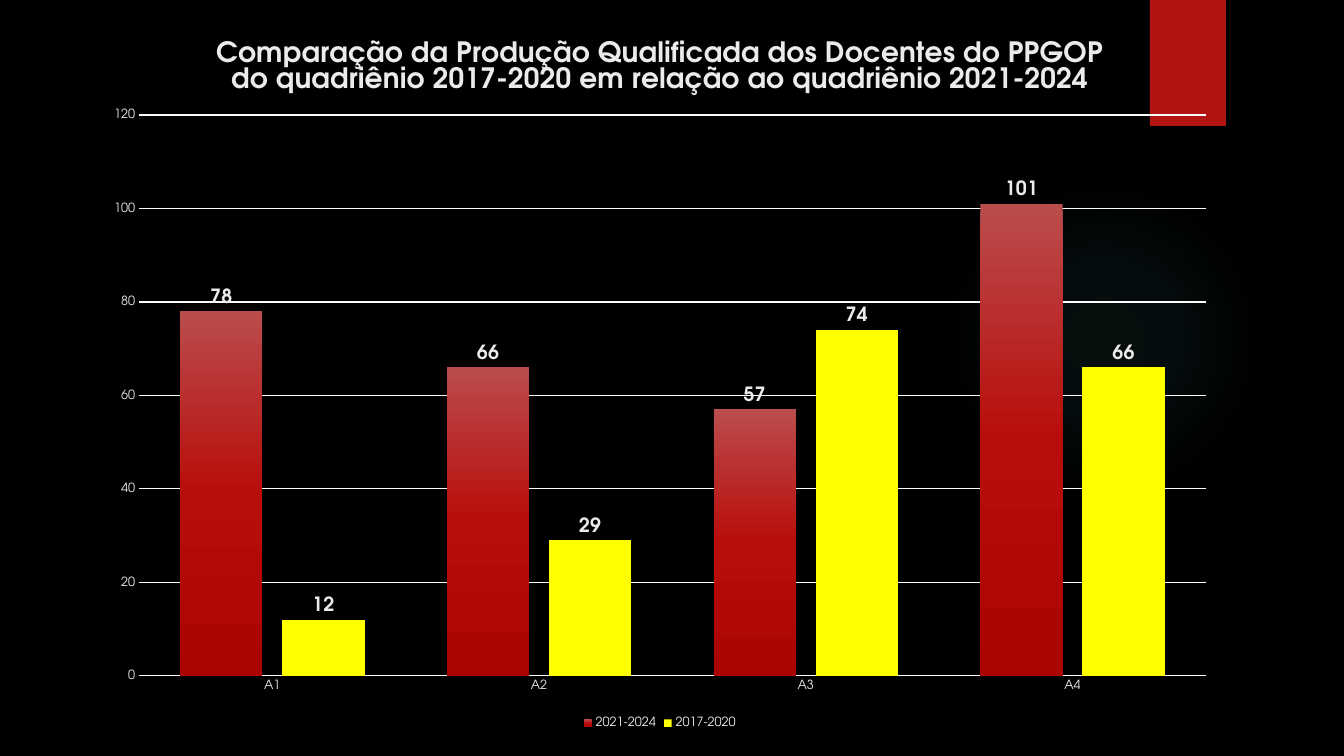
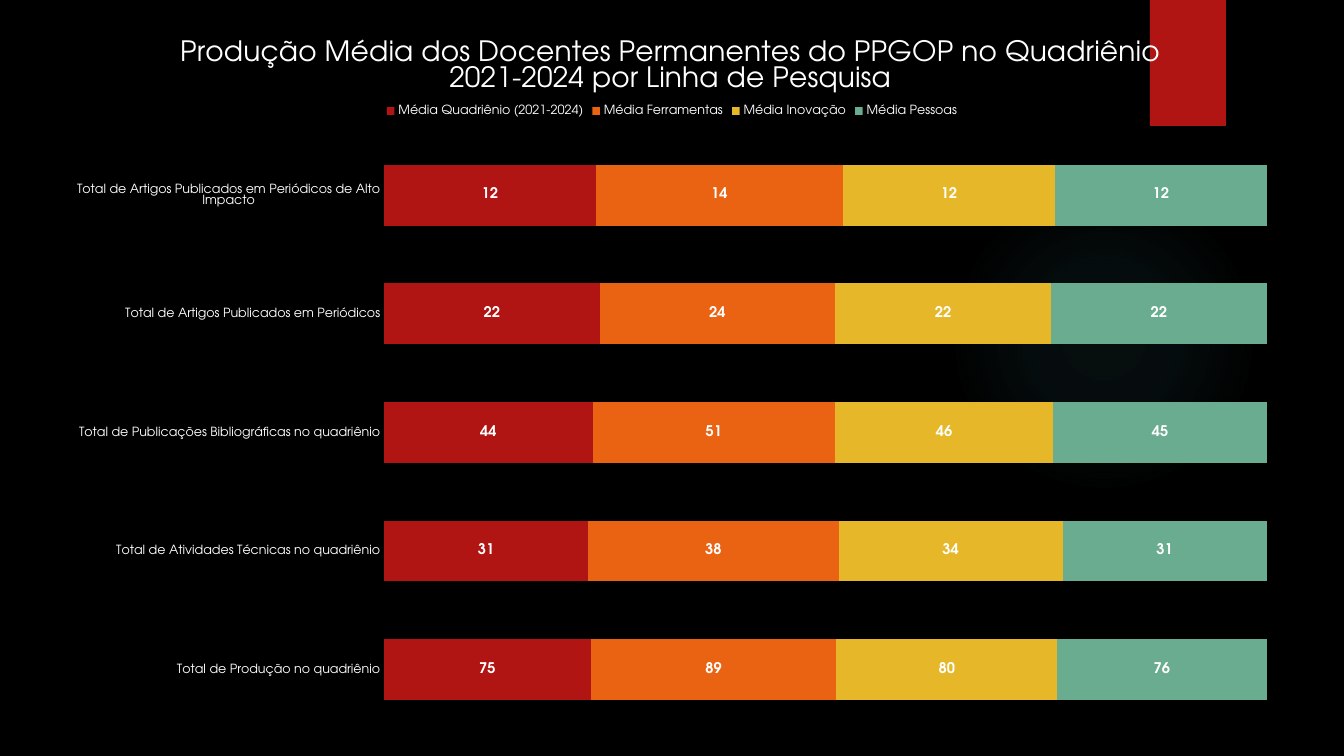
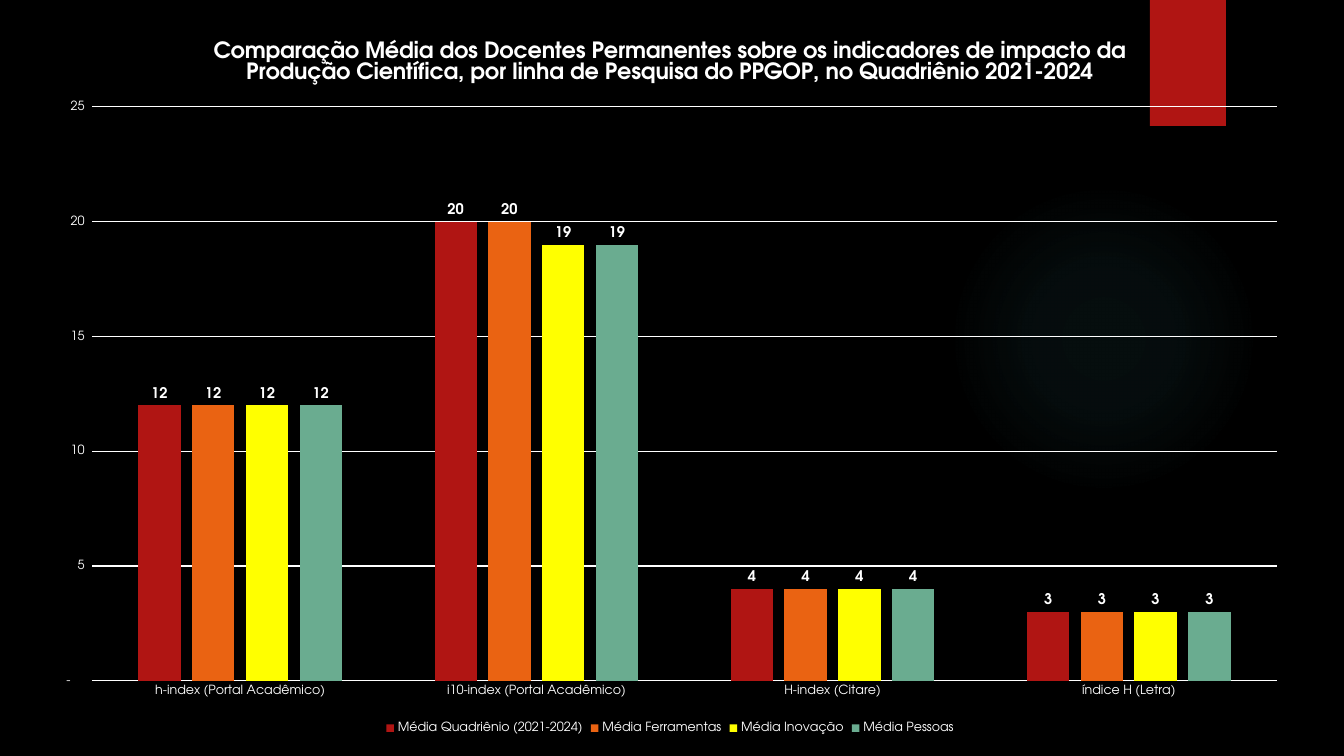
from dataclasses import dataclass
from typing import Optional

from pptx import Presentation
from pptx.chart.chart import Chart
from pptx.chart.data import CategoryChartData
from pptx.dml.color import RGBColor
from pptx.enum.chart import XL_CHART_TYPE as ChartType
from pptx.enum.chart import XL_LABEL_POSITION as LabelPos
from pptx.enum.chart import XL_LEGEND_POSITION as LegendPos
from pptx.enum.chart import XL_TICK_MARK as TickMark
from pptx.enum.shapes import MSO_SHAPE as Preset
from pptx.oxml import parse_xml
from pptx.oxml.ns import nsdecls, qn
from pptx.util import Emu, Pt

# Shared look
EMU_PER_PX = 914400 / 100.8
FONT = "TeX Gyre Adventor"
BLACK, WHITE, MIST = "000000", "FFFFFF", "EBEBEB"
RED, ORANGE, GOLD, YELLOW, GREEN = "B01513", "EA6312", "E6B729", "FFFF00", "6AAC90"
GLOW_STOPS = [(0, "50B9C1", 7), (36, "50B9C1", 6), (69, "50B9C1", 0)]
RED_FADE = [(0, "BB4C4C", 100), (50, "B80D0B", 100), (100, "AA0503", 100)]
RADIAL = ('<a:path path="circle"><a:fillToRect l="50000" t="50000" '
          'r="50000" b="50000"/></a:path>')
DOWNWARD = '<a:lin ang="5400000" scaled="0"/>'
ACCOUNTING = '_-* #,##0_-;\\-* #,##0_-;_-* "-"??_-;_-@_'
LINES = ["Média Quadriênio (2021-2024)", "Média Ferramentas",
         "Média Inovação", "Média Pessoas"]


@dataclass
class Box:
    left: int
    top: int
    width: int
    height: int

    def emu(self) -> list[Emu]:
        return [px(n) for n in (self.left, self.top, self.width, self.height)]


@dataclass
class Series:
    name: str
    values: list[int]
    color: str
    fade: Optional[list] = None


@dataclass
class ChartSlide:
    title: str
    box: Box
    plot: Box
    categories: list[str]
    series: list[Series]
    gap: int
    overlap: int
    kind: ChartType = ChartType.COLUMN_CLUSTERED
    title_size: int = 20
    title_bold: bool = True
    text_color: str = WHITE
    grid_color: str = WHITE
    label_size: float = 10.5
    label_pos: LabelPos = LabelPos.OUTSIDE_END
    number_format: str = ACCOUNTING
    axis_top: int = 0
    axis_step: int = 0
    legend_pos: LegendPos = LegendPos.BOTTOM
    legend: Optional[Box] = None


def px(n: int) -> Emu:
    return Emu(round(n * EMU_PER_PX))


def rgb(color: str) -> RGBColor:
    return RGBColor.from_string(color)


def set_font(font, size: float, color: str, bold: bool = False) -> None:
    for name, value in {"name": FONT, "size": Pt(size), "bold": bold}.items():
        setattr(font, name, value)
    font.color.rgb = rgb(color)


def set_fill(fmt, color: str) -> None:
    fmt.fill.solid()
    fmt.fill.fore_color.rgb = rgb(color)


def set_gradient(properties, stops: list, direction: str) -> None:
    """Swap the solid fill of a shape or series for a gradient."""
    marks = "".join(
        f'<a:gs pos="{pos * 1000}"><a:srgbClr val="{color}">'
        f'<a:alpha val="{alpha * 1000}"/></a:srgbClr></a:gs>'
        for pos, color, alpha in stops)
    solid = properties.find(qn("a:solidFill"))
    properties.replace(solid, parse_xml(
        f'<a:gradFill {nsdecls("a")} rotWithShape="1"><a:gsLst>{marks}</a:gsLst>'
        f'{direction}</a:gradFill>'))


def set_layout(parent, index: int, part: Box, whole: Box, inner: bool) -> None:
    """Pin a chart part to a place inside the chart frame."""
    for old in parent.findall(qn("c:layout")):
        parent.remove(old)
    shares = {"x": (part.left - whole.left) / whole.width,
              "y": (part.top - whole.top) / whole.height,
              "w": part.width / whole.width,
              "h": part.height / whole.height}
    target = '<c:layoutTarget val="inner"/>' if inner else ""
    modes = '<c:xMode val="edge"/><c:yMode val="edge"/>'
    sizes = "".join(f'<c:{key} val="{share:.4f}"/>' for key, share in shares.items())
    parent.insert(index, parse_xml(
        f'<c:layout {nsdecls("c")}><c:manualLayout>{target}{modes}{sizes}'
        f'</c:manualLayout></c:layout>'))


def add_decor(slide, preset: Preset, box: Box, color: str):
    decor = slide.shapes.add_shape(preset, *box.emu())
    decor.shadow.inherit = False
    set_fill(decor, color)
    decor.line.fill.background()
    return decor


def style_axes(chart: Chart, page: ChartSlide) -> None:
    categories, values = chart.category_axis, chart.value_axis
    for axis in (categories, values):
        axis.major_tick_mark = axis.minor_tick_mark = TickMark.NONE
        set_font(axis.tick_labels.font, 9, page.text_color)
        axis.format.line.fill.background()
    values.has_major_gridlines = bool(page.axis_top)
    if not page.axis_top:
        values.visible = False
        return
    values.minimum_scale, values.maximum_scale = 0, page.axis_top
    values.major_unit = page.axis_step
    values.tick_labels.number_format = page.number_format
    values.tick_labels.number_format_is_linked = False
    for line in (categories.format.line, values.major_gridlines.format.line):
        line.color.rgb = rgb(page.grid_color)
        line.width = Pt(0.75)


def style_series(chart: Chart, page: ChartSlide) -> None:
    bars = chart.plots[0]
    bars.gap_width, bars.overlap = page.gap, page.overlap
    bars.vary_by_categories = False
    for drawn, series in zip(bars.series, page.series):
        set_fill(drawn.format, series.color)
        if series.fade:
            set_gradient(drawn._element.spPr, series.fade, DOWNWARD)
        labels = drawn.data_labels
        for name, value in {"show_value": True, "position": page.label_pos,
                            "number_format": page.number_format,
                            "number_format_is_linked": False}.items():
            setattr(labels, name, value)
        set_font(labels.font, page.label_size, page.text_color, True)


def add_chart(slide, page: ChartSlide) -> None:
    data = CategoryChartData()
    data.categories = page.categories
    for series in page.series:
        data.add_series(series.name, series.values)
    chart = slide.shapes.add_chart(page.kind, *page.box.emu(), data).chart
    set_font(chart.font, 10, WHITE)

    chart.has_title = True
    heading = chart.chart_title.text_frame
    heading.text = page.title
    set_font(heading.paragraphs[0].runs[0].font, page.title_size,
             page.text_color, page.title_bold)

    chart.has_legend = True
    legend = chart.legend
    legend.position, legend.include_in_layout = page.legend_pos, False
    set_font(legend.font, 9, page.text_color)
    if page.legend:
        set_layout(legend._element, 1, page.legend, page.box, False)

    style_axes(chart, page)
    style_series(chart, page)
    plot_area = chart._chartSpace.chart.plotArea
    set_layout(plot_area, 0, page.plot, page.box, True)


def add_page(deck, page: ChartSlide) -> None:
    slide = deck.slides.add_slide(deck.slide_layouts[6])
    set_fill(slide.background, BLACK)
    glow = add_decor(slide, Preset.OVAL, Box(949, 184, 310, 310), BLACK)
    set_gradient(glow._element.spPr, GLOW_STOPS, RADIAL)
    add_decor(slide, Preset.RECTANGLE, Box(1150, 0, 76, 126), RED)
    add_chart(slide, page)


def line_series(rows: list[list[int]], colors: list[str]) -> list[Series]:
    return [Series(*parts) for parts in zip(LINES, rows, colors)]


# Content
PAGES = [
    ChartSlide(
        title="Comparação da Produção Qualificada dos Docentes do PPGOP "
              "do quadriênio 2017-2020 em relação ao quadriênio 2021-2024",
        box=Box(91, 13, 1138, 720), plot=Box(139, 115, 1067, 561),
        categories=["A1", "A2", "A3", "A4"],
        series=[Series("2021-2024", [78, 66, 57, 101], RED, RED_FADE),
                Series("2017-2020", [12, 29, 74, 66], YELLOW)],
        gap=100, overlap=-24, text_color=MIST, grid_color="FCFCFC",
        label_size=14, number_format="General", axis_top=120, axis_step=20),
    ChartSlide(
        title="Produção Média dos Docentes Permanentes do PPGOP "
              "no Quadriênio 2021-2024 por Linha de Pesquisa",
        box=Box(50, 12, 1241, 731), plot=Box(384, 136, 883, 593),
        categories=["Total de Produção no quadriênio",
                    "Total de Atividades Técnicas no quadriênio",
                    "Total de Publicações Bibliográficas no quadriênio",
                    "Total de Artigos Publicados em Periódicos",
                    "Total de Artigos Publicados em Periódicos de Alto Impacto"],
        series=line_series([[75, 31, 44, 22, 12], [89, 38, 51, 24, 14],
                            [80, 34, 46, 22, 12], [76, 31, 45, 22, 12]],
                           [RED, ORANGE, GOLD, GREEN]),
        gap=95, overlap=100, kind=ChartType.BAR_STACKED_100, title_bold=False,
        label_pos=LabelPos.CENTER, legend_pos=LegendPos.TOP,
        legend=Box(382, 101, 580, 20)),
    ChartSlide(
        title="Comparação Média dos Docentes Permanentes sobre os indicadores "
              "de impacto da Produção Científica, por linha de Pesquisa "
              "do PPGOP, no Quadriênio 2021-2024",
        box=Box(38, 15, 1264, 723), plot=Box(92, 107, 1185, 574),
        categories=["h-index (Portal Acadêmico)", "i10-index (Portal Acadêmico)",
                    "H-index (Citare)", "índice H (Letra)"],
        series=line_series([[12, 20, 4, 3], [12, 20, 4, 3],
                            [12, 19, 4, 3], [12, 19, 4, 3]],
                           [RED, ORANGE, YELLOW, GREEN]),
        gap=219, overlap=-27, title_size=16, axis_top=25, axis_step=5),
]


def main() -> None:
    deck = Presentation()
    deck.slide_width, deck.slide_height = px(1344), px(756)
    for page in PAGES:
        add_page(deck, page)
    deck.save("out.pptx")


if __name__ == "__main__":
    main()
